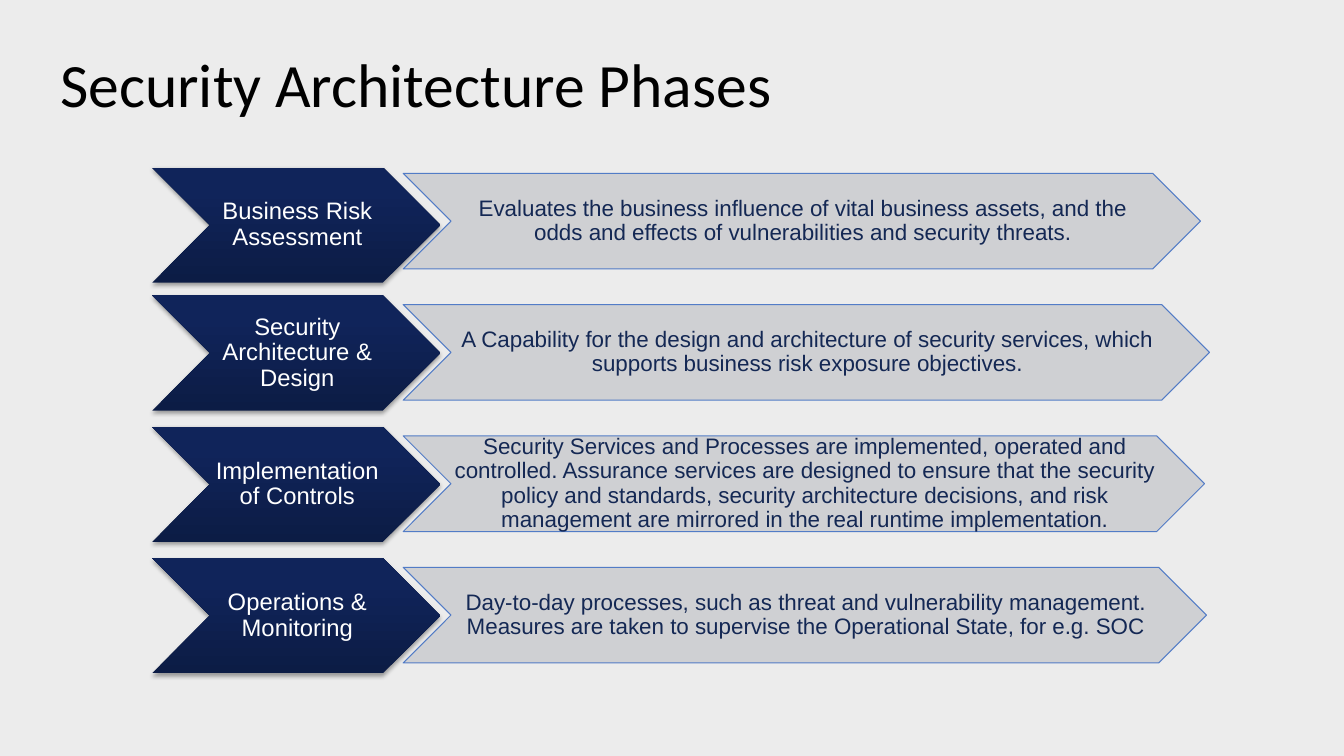
from copy import deepcopy
from lxml import etree
from pptx import Presentation
from pptx import util as u
from pptx.dml import color
from pptx.enum import shapes, text
from pptx.oxml import ns

TITLE = "Security Architecture Phases"
PHASES = [
    {"name": "Business Risk Assessment", "bar_width": 569.5, "label_shift": 2.4,
     "detail": "Evaluates the business influence of vital business assets, and the odds "
               "and effects of vulnerabilities and security threats."},
    {"name": "Security Architecture & Design", "bar_width": 576, "label_shift": 0,
     "detail": "A Capability for the design and architecture of security services, which "
               "supports business risk exposure objectives."},
    {"name": "Implementation of Controls", "bar_width": 572.4, "label_shift": 0,
     "detail": "Security Services and Processes are implemented, operated and controlled. "
               "Assurance services are designed to ensure that the security policy and "
               "standards, security architecture decisions, and risk management are "
               "mirrored in the real runtime implementation."},
    {"name": "Operations & Monitoring", "bar_width": 573.8, "label_shift": 0,
     "detail": "Day-to-day processes, such as threat and vulnerability management. Measures "
               "are taken to supervise the Operational State, for e.g. SOC"},
]
THEME = {
    "background": "ECECEC", "title": "000000", "label_text": "FFFFFF",
    "bar": "CCCDD1", "bar_line": "4472C4", "bar_text": "142854", "shadow": "000000",
    "label_stops": [(0, "0C1C45"), (0.8, "10245A"), (1, "0E235C")],
    "title_font": "Calibri", "body_font": "Arial",
    "title_size": 44, "label_size": 17, "bar_size": 16,
}
LABEL = {"left": 108.8, "top": 117.3, "width": 205.8, "height": 82.2}
BAR = {"left": 288, "top": 123.8, "height": 68.3}
PITCH = 93.8


def rgb(name):
    return color.RGBColor.from_string(THEME[name])


def write(shape, words, font, size, ink, align):
    frame = shape.text_frame
    frame.word_wrap = True
    frame.vertical_anchor = text.MSO_ANCHOR.MIDDLE
    para = frame.paragraphs[0]
    para.text = words
    para.alignment = align
    para.line_spacing = 0.9
    span = para.runs[0].font
    span.name, span.size = THEME[font], u.Pt(THEME[size])
    span.color.rgb = rgb(ink)


def add_chevron(page, left, top, width, height, words, size, ink):
    shape = page.shapes.add_shape(shapes.MSO_SHAPE.CHEVRON, u.Pt(left), u.Pt(top),
                                  u.Pt(width), u.Pt(height))
    shape.shadow.inherit = False
    frame = shape.text_frame
    frame.margin_left, frame.margin_right = u.Pt(1.44), 0
    frame.margin_top = frame.margin_bottom = u.Pt(0.72)
    write(shape, words, "body_font", size, ink, text.PP_ALIGN.CENTER)
    return shape


def set_alpha(color_element, percent):
    alpha = etree.SubElement(color_element, ns.qn("a:alpha"))
    alpha.set("val", str(percent * 1000))


def style_label(shape):
    shape.line.fill.background()
    shape.fill.gradient()
    shape.fill.gradient_angle = 90
    stop_list = shape.element.spPr.find(".//" + ns.qn("a:gsLst"))
    stop_list.append(deepcopy(stop_list[-1]))
    for stop, (position, ink) in zip(shape.fill.gradient_stops, THEME["label_stops"]):
        stop.position = position
        stop.color.rgb = color.RGBColor.from_string(ink)
    effects = shape.element.spPr.find(ns.qn("a:effectLst"))
    shadow = etree.SubElement(effects, ns.qn("a:outerShdw"), blurRad=str(u.Pt(3.1)),
                              dist=str(u.Pt(1.8)), dir="5400000", rotWithShape="0")
    shade = etree.SubElement(shadow, ns.qn("a:srgbClr"), val=THEME["shadow"])
    set_alpha(shade, 35)


def style_bar(shape):
    shape.fill.solid()
    shape.fill.fore_color.rgb = rgb("bar")
    shape.line.color.rgb = rgb("bar_line")
    shape.line.width = u.Pt(0.75)
    for tone in shape.element.spPr.iter(ns.qn("a:srgbClr")):
        set_alpha(tone, 90)


def main():
    deck = Presentation()
    deck.slide_width, deck.slide_height = u.Pt(960), u.Pt(540)
    page = deck.slides.add_slide(deck.slide_layouts[6])
    page.background.fill.solid()
    page.background.fill.fore_color.rgb = rgb("background")

    box = page.shapes.add_textbox(u.Pt(36), u.Pt(10), u.Pt(828), u.Pt(104.4))
    write(box, TITLE, "title_font", "title_size", "title", text.PP_ALIGN.LEFT)

    for row, phase in enumerate(PHASES):
        label_top = LABEL["top"] + row * PITCH + phase["label_shift"]
        label = add_chevron(page, LABEL["left"], label_top, LABEL["width"],
                            LABEL["height"], phase["name"], "label_size", "label_text")
        style_label(label)
        bar = add_chevron(page, BAR["left"], BAR["top"] + row * PITCH,
                          phase["bar_width"], BAR["height"], phase["detail"],
                          "bar_size", "bar_text")
        style_bar(bar)

    deck.save("out.pptx")


if __name__ == "__main__":
    main()
